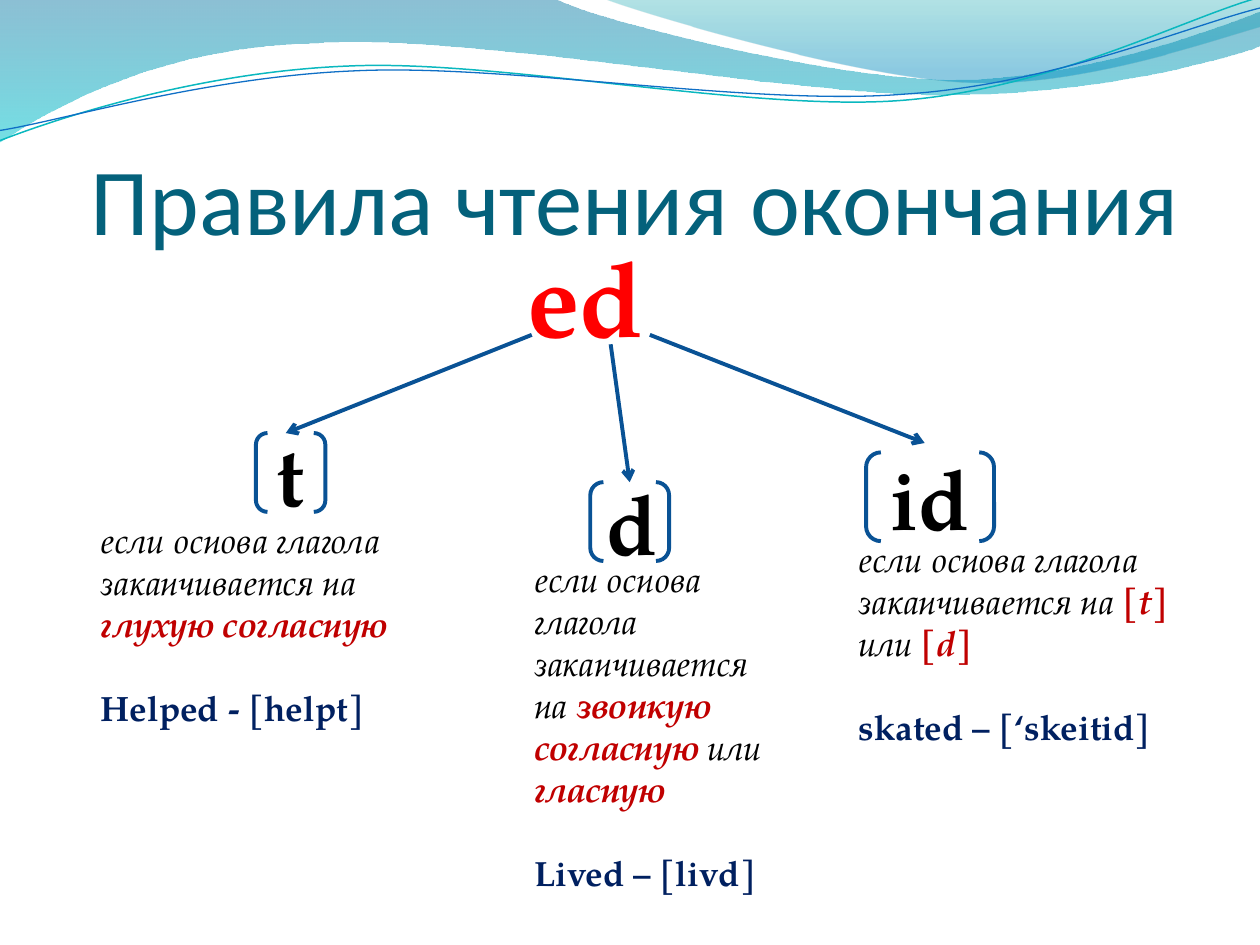
from lxml import etree
from pptx import Presentation
from pptx import util as u
from pptx.dml import color
from pptx.enum import shapes, text
from pptx.oxml import ns

C = {
    "title": "04617B", "ending": "FF0000", "line": "095295", "text": "000000",
    "key": "C00000", "example": "002060", "teal": "0AB8BF", "blue": "0F6FC6",
}
SERIF = "TeX Gyre Pagella"

WAVES = [
    ([(0, 0), (4.4, -0.01),
      ((4.76, 0.17), (6.64, 0.63), (7.58, 0.63)),
      ((8.53, 0.63), (9.58, 0.26), (10, 0.09)), (10.01, 0.36),
      ((9.83, 0.44), (8.7, 0.76), (7.46, 0.75)),
      ((6.22, 0.75), (3.82, 0.28), (2.57, 0.34)),
      ((1.29, 0.36), (0.46, 0.83), (-0.01, 1.13)), (0, 0)],
     [(0, "0074A1", 45), (1, "00C6CF", 55)]),
    ([(4.79, -0.01),
      ((5.09, 0.11), (6.82, 0.62), (7.69, 0.65)),
      ((8.56, 0.69), (9.61, 0.32), (10, 0.21)), (10, 0), (4.79, -0.01)],
     [(0, "00A1A9", 30), (0.8, "008BBF", 45)]),
]
CURVES = [
    ([(-0.02, 0.88),
      ((0.46, 0.72), (1.58, 0.41), (2.77, 0.42)),
      ((3.95, 0.42), (5.92, 0.93), (7.12, 0.9)),
      ((8.32, 0.87), (9.4, 0.36), (10, 0.22))], "teal", 0.85),
    ([(-0.02, 0.8),
      ((0.46, 0.75), (1.64, 0.45), (2.83, 0.46)),
      ((4.03, 0.46), (5.96, 0.89), (7.16, 0.85)),
      ((8.35, 0.83), (9.42, 0.42), (10.02, 0.3))], "blue", 0.75),
]
CURVE_ROTATION = 357.3

RULE = "если основа глагола заканчивается на "
COLUMNS = [
    dict(box=(1.78, 8.73, 7.14, 6.1), bracket=(3.38, 1.4, 1.59), drop=1.59,
         sound="t", rule=[(RULE, 0), ("глухую согласную", 1)],
         example="Helped - [helpt]",
         arrow=((10.72, 6.75), (5.76, 8.73)), joined=False),
    dict(box=(10.52, 9.72, 5.36, 8.48), bracket=(1.38, 1.59, 1.59), drop=1.4,
         sound="d", rule=[(RULE, 0), ("звонкую согласную ", 1),
                          ("или ", 0), ("гласную", 1)],
         example="Lived – [livd]",
         arrow=((12.31, 6.94), (12.7, 9.72)), joined=True),
    dict(box=(17.06, 9.12, 6.76, 6.97), bracket=(0.4, 2.58, 1.79), drop=1.59,
         sound="id", rule=[(RULE, 0), ("[t] ", 1), ("или", 0), (" [d]", 1)],
         example="skated – [‘skeitid]",
         arrow=((13.1, 6.75), (18.64, 8.93)), joined=False),
]


def rgb(name):
    return color.RGBColor.from_string(C.get(name, name))


def cm(values):
    return [u.Cm(v) for v in values]


def add_run(p, words, size, name, bold=False, italic=False, font=SERIF):
    r = p.add_run()
    r.text = words
    f = r.font
    f.name, f.size, f.bold, f.italic = font, u.Pt(size), bold, italic
    f.color.rgb = rgb(name)


def add_path(slide, box, path, close):
    left, top, width = cm(box)
    steps = [s if isinstance(s[0], tuple) else (s,) for s in path]
    pts = [(left + x * width / 10, top + y * width / 10) for s in steps for x, y in s]
    fb = slide.shapes.build_freeform(*pts[0])
    fb.add_line_segments(pts[1:], close=close)
    sp = fb.convert_to_shape()
    sp.shadow.inherit = False
    lines = iter(list(sp._element.iter(ns.qn("a:lnTo"))))
    for step in steps[1:]:
        segment = next(lines)
        if len(step) == 3:
            segment.tag = ns.qn("a:cubicBezTo")
            for _ in range(2):
                extra = next(lines)
                segment.append(extra[0])
                extra.getparent().remove(extra)
    return sp


def add_header(slide, box):
    for path, stops in WAVES:
        sp = add_path(slide, box, path, True)
        sp.line.fill.background()
        sp.fill.gradient()
        sp.fill.gradient_angle = 270
        for stop, (position, name, _) in zip(sp.fill.gradient_stops, stops):
            stop.position = position
            stop.color.rgb = rgb(name)
        for clr, (_, _, alpha) in zip(sp._element.spPr.iter(ns.qn("a:srgbClr")), stops):
            etree.SubElement(clr, ns.qn("a:alpha"), val=str(alpha * 1000))
    for path, name, width in CURVES:
        sp = add_path(slide, box, path, False)
        sp.rotation = CURVE_ROTATION
        sp.fill.background()
        sp.line.color.rgb = rgb(name)
        sp.line.width = u.Pt(width)


def add_title(slide, box):
    sp = slide.shapes.title
    slide.shapes._spTree.append(sp._element)
    sp.left, sp.top, sp.width, sp.height = cm(box)
    tf = sp.text_frame
    tf.margin_left = tf.margin_right = tf.margin_bottom = 0
    tf.vertical_anchor = text.MSO_ANCHOR.BOTTOM
    p = tf.paragraphs[0]
    p.alignment = text.PP_ALIGN.CENTER
    add_run(p, "Правила чтения окончания", 54, "title", font="Calibri")


def add_text_box(slide, box):
    tf = slide.shapes.add_textbox(*cm(box)).text_frame
    tf.word_wrap = True
    tf.auto_size = text.MSO_AUTO_SIZE.SHAPE_TO_FIT_TEXT
    return tf


def add_ending(slide, box):
    p = add_text_box(slide, box).paragraphs[0]
    p.alignment = text.PP_ALIGN.CENTER
    add_run(p, "ed", 60, "ending", bold=True)


def add_arrow(slide, start, end, target=None):
    cx = slide.shapes.add_connector(
        shapes.MSO_CONNECTOR.STRAIGHT, *cm(start), *cm(end))
    if target is not None:
        cx.end_connect(target, 0)
    cx.line.color.rgb = rgb("line")
    cx.line.width = u.Pt(2.25)
    etree.SubElement(cx.line._get_or_add_ln(), ns.qn("a:tailEnd"), type="arrow")
    etree.SubElement(cx._element.spPr, ns.qn("a:effectLst"))


def add_column(slide, box, bracket, drop, sound, rule, example, arrow, joined):
    x, y, w, h = box
    dx, bw, bh = bracket
    sp = slide.shapes.add_shape(
        shapes.MSO_SHAPE.DOUBLE_BRACKET, *cm((x + dx, y, bw, bh)))
    sp.shadow.inherit = False
    sp.fill.background()
    sp.line.color.rgb = rgb("line")
    sp.line.width = u.Pt(2.25)
    sp.text_frame.vertical_anchor = text.MSO_ANCHOR.MIDDLE
    p = sp.text_frame.paragraphs[0]
    p.alignment = text.PP_ALIGN.CENTER
    add_run(p, sound, 48, "text", bold=True)

    tf = add_text_box(slide, (x, y + drop, w, h - drop))
    for words, key in rule:
        add_run(tf.paragraphs[0], words, 20, "key" if key else "text", bool(key), True)
    p = tf.add_paragraph()
    p.space_before = u.Pt(24)
    add_run(p, example, 20, "example", bold=True)
    add_arrow(slide, *arrow, sp if joined else None)


def main():
    prs = Presentation()
    prs.slide_width, prs.slide_height = cm((25.4, 19.05))
    slide = prs.slides.add_slide(prs.slide_layouts[5])
    add_header(slide, (0, 0, 25.4))
    add_title(slide, (1.27, 1.95, 23.06, 3.17))
    add_ending(slide, (9.13, 4.57, 5.36, 2.82))
    for column in COLUMNS:
        add_column(slide, **column)
    prs.save("out.pptx")


if __name__ == "__main__":
    main()
